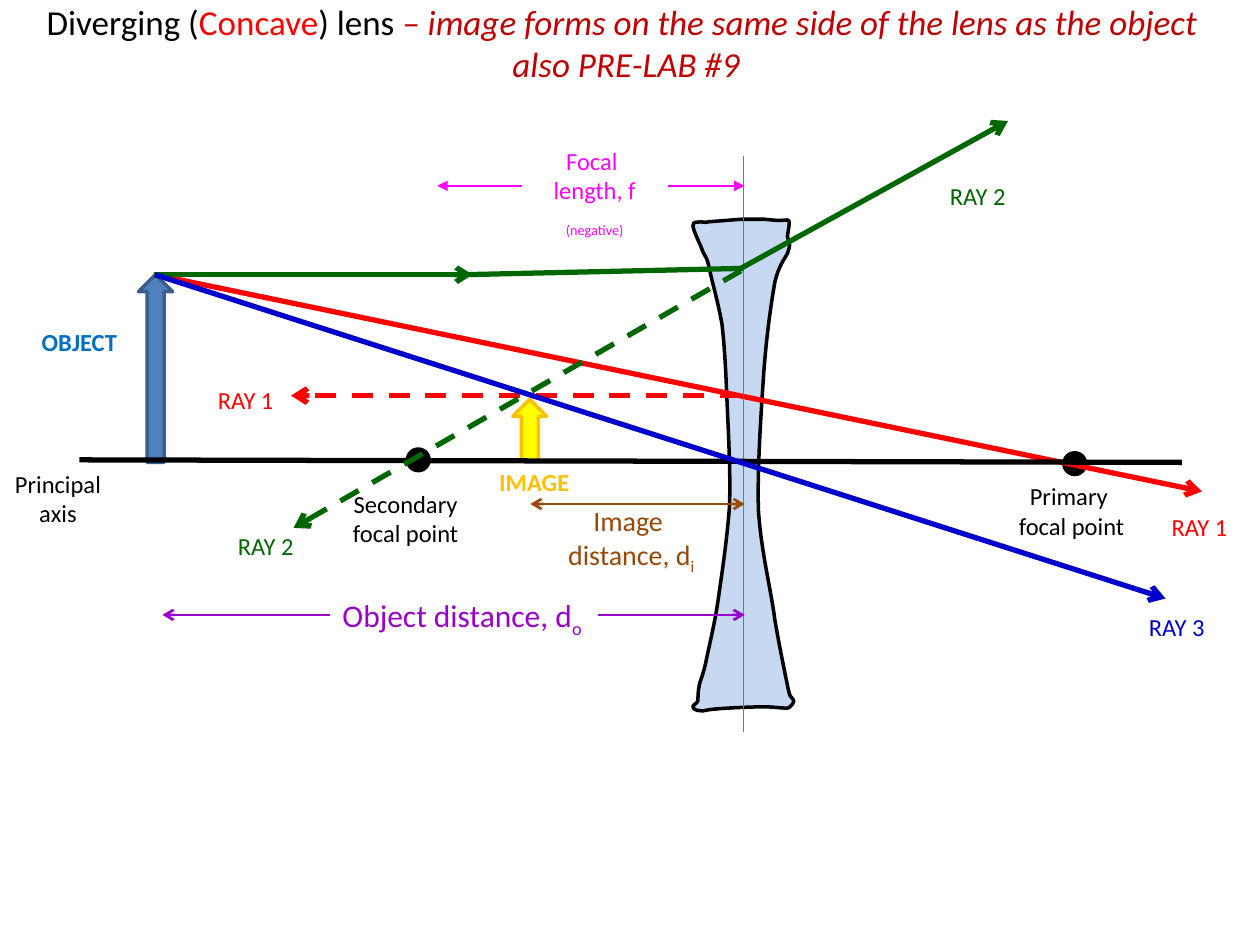
from dataclasses import dataclass

from lxml import etree
from pptx import Presentation
from pptx.dml.color import RGBColor
from pptx.enum.dml import MSO_LINE
from pptx.enum.shapes import MSO_CONNECTOR, MSO_SHAPE
from pptx.enum.text import MSO_ANCHOR, MSO_AUTO_SIZE, PP_ALIGN
from pptx.oxml.ns import qn
from pptx.util import Cm, Pt

STRAIGHT = MSO_CONNECTOR.STRAIGHT
UP_ARROW, OVAL = MSO_SHAPE.UP_ARROW, MSO_SHAPE.OVAL
DASH = MSO_LINE.DASH
TOP, MIDDLE = MSO_ANCHOR.TOP, MSO_ANCHOR.MIDDLE
GROW, FIXED = MSO_AUTO_SIZE.SHAPE_TO_FIT_TEXT, MSO_AUTO_SIZE.NONE
LEFT, CENTER = PP_ALIGN.LEFT, PP_ALIGN.CENTER
LEFT_SIDE, RIGHT_SIDE = 1, 3
TIGHT, PADDED = (0, 0.1, 0, 0), (0.1, 0.05, 0.1, 0.05)


@dataclass(frozen=True)
class Theme:
    font: str = "Calibri"
    title: int = 20
    label: int = 14
    image_distance: int = 16
    object_distance: int = 18
    ray_width: float = 3
    measure_width: float = 1.5
    black: str = "000000"
    red: str = "FF0000"
    dark_red: str = "C00000"
    green: str = "006600"
    blue: str = "0000CC"
    magenta: str = "FF00FF"
    purple: str = "9900CC"
    brown: str = "984807"
    object_text: str = "0070C0"
    object_fill: str = "4F81BD"
    object_line: str = "3A5F8C"
    image_fill: str = "FFFF00"
    gold: str = "FFC000"
    lens: str = "C6D9F1"
    lens_axis: str = "4B7EBC"


T = Theme()

# Lens outline in inches: top edge, then cubic segments (control, control, end)
LENS_TOP = [(5.88, 1.74), (5.63, 1.76)]
LENS_CURVES = [
    (5.58, 1.77, 5.58, 1.76, 5.56, 1.76), (5.54, 1.77, 5.5, 1.75, 5.5, 1.79),
    (5.5, 1.83, 5.56, 1.94, 5.58, 2), (5.61, 2.06, 5.61, 2.04, 5.63, 2.13),
    (5.65, 2.23, 5.7, 2.4, 5.73, 2.57), (5.75, 2.74, 5.76, 2.92, 5.77, 3.17),
    (5.78, 3.41, 5.8, 3.76, 5.79, 4.02), (5.77, 4.29, 5.73, 4.55, 5.7, 4.76),
    (5.67, 4.97, 5.62, 5.16, 5.6, 5.27), (5.57, 5.39, 5.56, 5.39, 5.55, 5.44),
    (5.54, 5.49, 5.54, 5.53, 5.54, 5.56), (5.53, 5.59, 5.5, 5.59, 5.5, 5.61),
    (5.5, 5.62, 5.52, 5.64, 5.55, 5.64), (5.57, 5.65, 5.57, 5.64, 5.65, 5.63),
    (5.74, 5.62, 5.96, 5.61, 6.06, 5.61), (6.15, 5.61, 6.19, 5.62, 6.23, 5.62),
    (6.26, 5.62, 6.26, 5.62, 6.27, 5.61), (6.29, 5.6, 6.3, 5.57, 6.3, 5.56),
    (6.3, 5.55, 6.28, 5.54, 6.27, 5.52), (6.27, 5.5, 6.27, 5.54, 6.25, 5.44),
    (6.23, 5.34, 6.19, 5.15, 6.15, 4.92), (6.12, 4.68, 6.04, 4.37, 6.02, 4.05),
    (6.01, 3.73, 6.04, 3.29, 6.06, 2.99), (6.08, 2.69, 6.12, 2.41, 6.15, 2.24),
    (6.19, 2.07, 6.25, 2.04, 6.26, 1.98), (6.28, 1.92, 6.25, 1.91, 6.25, 1.88),
    (6.25, 1.85, 6.26, 1.83, 6.26, 1.81), (6.26, 1.79, 6.27, 1.76, 6.26, 1.75),
    (6.25, 1.74, 6.22, 1.75, 6.19, 1.75), (6.16, 1.75, 6.07, 1.74, 6.07, 1.74),
]


def inch(value):
    """Positions are planned in inches and given in centimetres."""
    return Cm(value * 2.54)


def rgb(color):
    return RGBColor.from_string(color)


def add_text(s, box, paragraphs, size=T.label, color=T.black, bold=False,
             align=CENTER, anchor=MIDDLE, inset=TIGHT, wrap=True, fit=GROW):
    """Each paragraph is a list of (text, overrides): color, italic, sub."""
    sp = s.shapes.add_textbox(*map(inch, box))
    tf = sp.text_frame
    tf.word_wrap = wrap
    tf.auto_size = fit
    tf.vertical_anchor = anchor
    (tf.margin_left, tf.margin_top,
     tf.margin_right, tf.margin_bottom) = map(inch, inset)
    for i, runs in enumerate(paragraphs):
        p = tf.add_paragraph() if i else tf.paragraphs[0]
        p.alignment = align
        for text, fmt in runs:
            for j, line in enumerate(text.split("\n")):
                if j:
                    p.add_line_break()
                r = p.add_run()
                r.text = line
                r.font.name = T.font
                r.font.size = Pt(size)
                r.font.bold = bold
                r.font.italic = fmt.get("italic", False)
                r.font.color.rgb = rgb(fmt.get("color", color))
                if fmt.get("sub"):
                    r._r.get_or_add_rPr().set("baseline", "-25000")
    return sp


def add_label(s, box, *lines, **fmt):
    return add_text(s, box, [[(line, {})] for line in lines], **fmt)


def add_line(s, start, end, color, width=T.ray_width, head=None, tail=None,
             dash=None, join=None):
    c = s.shapes.add_connector(STRAIGHT, *map(inch, start + end))
    if join:
        c.begin_connect(*join)
    c.line.color.rgb = rgb(color)
    c.line.width = Pt(width)
    if dash:
        c.line.dash_style = dash
    ln = c.line._get_or_add_ln()
    for tag, kind in (("a:headEnd", head), ("a:tailEnd", tail)):
        if kind:
            etree.SubElement(ln, qn(tag)).set("type", kind)
    etree.SubElement(c._element.spPr, qn("a:effectLst"))


def paint(sp, fill, line=None):
    sp.shadow.inherit = False
    sp.fill.solid()
    sp.fill.fore_color.rgb = rgb(fill)
    if line:
        sp.line.color.rgb = rgb(line)
        sp.line.width = Pt(2)
    else:
        sp.line.fill.background()


def add_figure(s, kind, box, fill, line=None):
    paint(s.shapes.add_shape(kind, *map(inch, box)), fill, line)


def add_lens(s):
    points = LENS_TOP + [c[i:i + 2] for c in LENS_CURVES for i in (0, 2, 4)]
    outline = [(inch(x), inch(y)) for x, y in points + LENS_TOP[:1]]
    builder = s.shapes.build_freeform(*outline[0])
    builder.add_line_segments(outline[1:], close=True)
    sp = builder.convert_to_shape()
    # Between the two straight edges, every three points make one cubic
    edges = list(sp._element.iter(qn("a:lnTo")))[1:1 + 3 * len(LENS_CURVES)]
    for i in range(0, len(edges), 3):
        curve = etree.Element(qn("a:cubicBezTo"))
        edges[i].addprevious(curve)
        for edge in edges[i:i + 3]:
            curve.append(edge[0])
            edge.getparent().remove(edge)
    paint(sp, T.lens, T.black)


def add_measure(s, box, paragraphs, ends, color, arrow, **fmt):
    """A grouped caption with an arrow pointing out from each side."""
    group = s.shapes.add_group_shape()
    sp = add_text(group, box, paragraphs, color=color, anchor=TOP,
                  inset=PADDED, **fmt)
    left, top, width, height = box
    y = top + height / 2
    sides = ((left, LEFT_SIDE), (left + width, RIGHT_SIDE))
    for (x, side), end in zip(sides, ends):
        add_line(group, (x, y), (end, y), color, T.measure_width, tail=arrow,
                 join=(sp, side))


def main():
    prs = Presentation()
    prs.slide_width, prs.slide_height = inch(10), inch(7.5)
    s = prs.slides.add_slide(prs.slide_layouts[6])

    # Title
    add_text(s, (-0.03, 0, 10, 0.68), [[
        ("Diverging (", {}), ("Concave", {"color": T.red}), (") lens ", {}),
        ("– image forms on the same side of the lens as the object \n"
         "also PRE-LAB #9", {"color": T.dark_red, "italic": True})]],
        size=T.title, inset=PADDED, fit=FIXED)

    # Object and image
    add_figure(s, UP_ARROW, (1.1, 2.18, 0.27, 1.49), T.object_fill, T.object_line)
    add_figure(s, UP_ARROW, (4.07, 3.17, 0.27, 0.49), T.image_fill, T.gold)
    add_label(s, (0.17, 2.49, 0.92, 0.34), "OBJECT", color=T.object_text, bold=True)
    add_label(s, (3.78, 3.6, 0.92, 0.34), "IMAGE", color=T.gold, bold=True)

    # Focal length and lens
    add_measure(s, (4.14, 1.11, 1.16, 0.73),
                [[("Focal ", {})], [("length, f", {})], [("(negative)", {"sub": True})]],
                (3.47, 5.91), T.magenta, "triangle")
    add_lens(s)

    # Focal points
    add_label(s, (7.76, 3.72, 1.49, 0.57), "Primary ", "focal point")
    add_label(s, (2.76, 3.78, 0.92, 0.57), "Secondary focal point")
    for x, y in ((3.22, 3.55), (8.43, 3.58)):
        add_figure(s, OVAL, (x, y, 0.2, 0.2), T.black)

    # Axes and rays
    tip = (1.23, 2.18)
    add_line(s, tip, (9.54, 3.9), T.red, tail="arrow")
    add_line(s, (5.9, 1.24), (5.9, 5.81), T.lens_axis, 0.75)
    add_line(s, (9.38, 3.67), (0.63, 3.65), T.black)
    add_label(s, (0, 3.62, 0.92, 0.57), "Principal axis")
    for x, y, number, color in ((9.14, 3.96, 1, T.red), (7.38, 1.33, 2, T.green),
                                (8.96, 4.75, 3, T.blue), (1.57, 2.95, 1, T.red),
                                (1.73, 4.11, 2, T.green)):
        add_label(s, (x, y, 0.76, 0.34), f"RAY {number}", color=color)
    add_line(s, (1.22, 2.18), (3.75, 2.18), T.green, tail="arrow")
    add_line(s, (5.88, 2.13), (8, 0.96), T.green, tail="arrow")
    add_line(s, (5.88, 3.14), (2.31, 3.14), T.red, tail="arrow", dash=DASH)
    add_line(s, (3.69, 2.18), (5.9, 2.13), T.green)
    add_line(s, (2.33, 4.19), (5.88, 2.15), T.green, head="arrow", dash=DASH)
    add_line(s, tip, (9.25, 4.75), T.blue, tail="arrow")

    # Object and image distances
    add_measure(s, (2.62, 4.68, 2.13, 0.4),
                [[("Object distance, d", {}), ("o", {"sub": True})]],
                (1.29, 5.91), T.purple, "arrow",
                size=T.object_distance, align=LEFT)
    add_line(s, (4.21, 4), (5.91, 4), T.brown, T.measure_width,
             head="arrow", tail="arrow")
    add_text(s, (4.4, 3.95, 1.22, 0.64),
             [[("Image ", {})], [("distance, d", {}), ("i", {"sub": True})]],
             size=T.image_distance, color=T.brown, anchor=TOP,
             inset=PADDED, wrap=False)

    prs.save("out.pptx")


if __name__ == "__main__":
    main()
